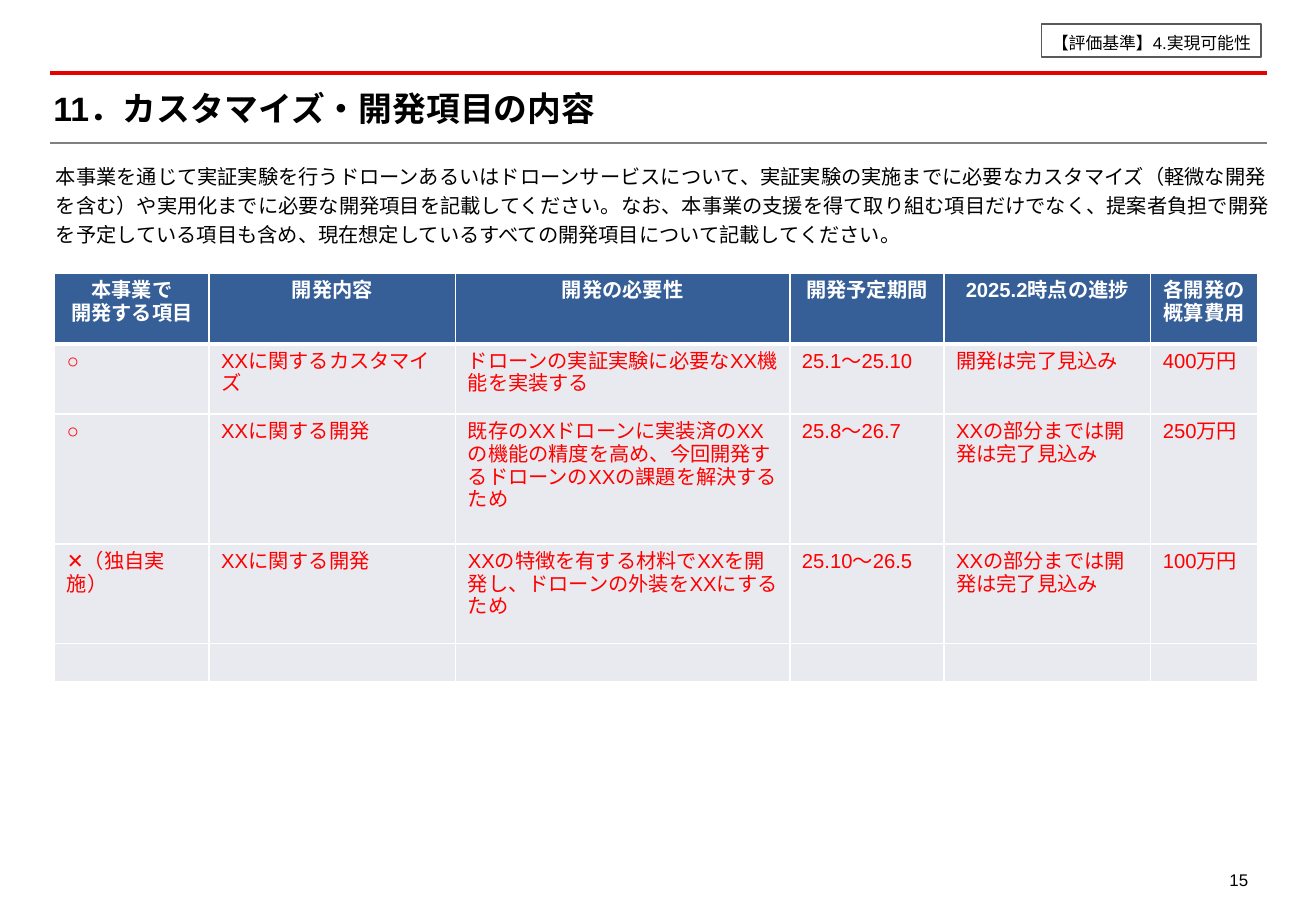
from dataclasses import dataclass

from lxml.etree import SubElement
from pptx import Presentation
from pptx.dml.color import RGBColor as RGB
from pptx.enum.shapes import MSO_CONNECTOR as Connector, MSO_SHAPE as Shape
from pptx.enum.text import MSO_ANCHOR as Anchor, MSO_AUTO_SIZE as AutoSize, PP_ALIGN as Align
from pptx.oxml import parse_xml
from pptx.oxml.ns import nsdecls, qn
from pptx.util import Inches, Pt


@dataclass(frozen=True)
class Theme:
    """Holds the colours, font and type sizes of the slide."""
    font: str = "Arial"
    ink: RGB = RGB(0, 0, 0)
    white: RGB = RGB(255, 255, 255)
    example: RGB = RGB(255, 0, 0)
    red_rule: RGB = RGB(0xE6, 0, 0)
    grey_rule: RGB = RGB(0x80, 0x80, 0x80)
    tag_line: RGB = RGB(0x59, 0x59, 0x59)
    header: RGB = RGB(0x36, 0x5F, 0x97)
    row: RGB = RGB(0xE8, 0xEA, 0xEF)
    title_size: int = 20
    body_size: int = 12
    small_size: int = 10


THEME = Theme()
TITLE = "11．カスタマイズ・開発項目の内容"
CRITERION = "【評価基準】4.実現可能性"
GUIDANCE = (
    "本事業を通じて実証実験を行うドローンあるいはドローンサービスについて、"
    "実証実験の実施までに必要なカスタマイズ（軽微な開発を含む）や"
    "実用化までに必要な開発項目を記載してください。"
    "なお、本事業の支援を得て取り組む項目だけでなく、"
    "提案者負担で開発を予定している項目も含め、"
    "現在想定しているすべての開発項目について記載してください。"
)
COLUMNS = [1.27, 2.03, 2.75, 1.27, 1.7, 0.88]
ROWS = [0.58, 0.58, 1.07, 0.82, 0.31]
ITEMS = [
    ["本事業で\n開発する項目", "開発内容", "開発の必要性", "開発予定期間",
     "2025.2時点の進捗", "各開発の概算費用"],
    ["○", "XXに関するカスタマイズ", "ドローンの実証実験に必要なXX機能を実装する",
     "25.1～25.10", "開発は完了見込み", "400万円"],
    ["○", "XXに関する開発",
     "既存のXXドローンに実装済のXXの機能の精度を高め、今回開発するドローンのXXの課題を解決するため",
     "25.8～26.7", "XXの部分までは開発は完了見込み", "250万円"],
    ["✕（独自実施）", "XXに関する開発",
     "XXの特徴を有する材料でXXを開発し、ドローンの外装をXXにするため",
     "25.10～26.5", "XXの部分までは開発は完了見込み", "100万円"],
    [""] * len(COLUMNS),
]


def write(frame, text, size, color=THEME.ink, bold=False, align=Align.LEFT, spacing=1.0):
    """Fills a text frame with evenly formatted paragraphs."""
    frame.text = text
    for paragraph in frame.paragraphs:
        paragraph.alignment = align
        paragraph.line_spacing = spacing
        paragraph.space_before = Pt(0)
        font = paragraph.font
        font.name, font.size, font.bold = THEME.font, Pt(size), bold
        font.color.rgb = color
        east_asian = SubElement(paragraph._p.pPr.find(qn("a:defRPr")), qn("a:ea"))
        east_asian.set("typeface", THEME.font)


def set_margins(frame, margin):
    """Gives a text frame the same margin on all sides."""
    frame.margin_left = frame.margin_right = Inches(margin)
    frame.margin_top = frame.margin_bottom = Inches(margin)


def add_rule(slide, left, top, width, color, weight):
    """Draws a horizontal rule."""
    rule = slide.shapes.add_connector(
        Connector.STRAIGHT, Inches(left), Inches(top), Inches(left + width), Inches(top))
    rule.line.color.rgb = color
    rule.line.width = Pt(weight)
    SubElement(rule._element.spPr, qn("a:effectLst"))


def add_heading(slide, left, top, width, height):
    """Places the title between its red and grey rules."""
    add_rule(slide, left, top, width, THEME.red_rule, 2)
    add_rule(slide, left, top + height, width, THEME.grey_rule, 1.25)
    title = slide.shapes.title
    title.left, title.top = Inches(left + 0.03), Inches(top + 0.12)
    title.width, title.height = Inches(width - 0.1), Inches(0.34)
    frame = title.text_frame
    set_margins(frame, 0)
    frame.vertical_anchor = Anchor.MIDDLE
    frame.auto_size = AutoSize.NONE
    write(frame, TITLE, THEME.title_size, bold=True)


def add_criterion(slide, left, top, width, height):
    """Adds the framed evaluation criterion."""
    criterion = slide.shapes.add_shape(
        Shape.RECTANGLE, Inches(left), Inches(top), Inches(width), Inches(height))
    criterion.shadow.inherit = False
    criterion.fill.background()
    criterion.line.color.rgb = THEME.tag_line
    criterion.line.width = Pt(1)
    frame = criterion.text_frame
    set_margins(frame, 0.02)
    frame.word_wrap = False
    frame.vertical_anchor = Anchor.MIDDLE
    write(frame, CRITERION, THEME.small_size, align=Align.CENTER, spacing=1.2)


def add_guidance(slide, left, top, width, height):
    """Adds the instructions above the table."""
    guidance = slide.shapes.add_textbox(
        Inches(left), Inches(top), Inches(width), Inches(height))
    frame = guidance.text_frame
    set_margins(frame, 0)
    frame.word_wrap = True
    write(frame, GUIDANCE, THEME.body_size, spacing=1.2)


def underline_cell(cell, color, weight):
    """Draws the bottom border of a cell."""
    cell._tc.get_or_add_tcPr().insert(0, parse_xml(
        f'<a:lnB {nsdecls("a")} w="{Pt(weight)}"><a:solidFill>'
        f'<a:srgbClr val="{color}"/></a:solidFill></a:lnB>'))


def add_items(slide, left, top):
    """Adds the table of development items."""
    items = slide.shapes.add_table(
        len(ROWS), len(COLUMNS), Inches(left), Inches(top),
        Inches(sum(COLUMNS)), Inches(sum(ROWS))).table
    items.horz_banding = False
    for column, width in zip(items.columns, COLUMNS):
        column.width = Inches(width)
    for number, (row, height, texts) in enumerate(zip(items.rows, ROWS, ITEMS)):
        row.height = Inches(height)
        is_header = number == 0
        for cell, text in zip(row.cells, texts):
            cell.fill.solid()
            cell.fill.fore_color.rgb = THEME.header if is_header else THEME.row
            write(cell.text_frame, text, THEME.body_size,
                  THEME.white if is_header else THEME.example, is_header,
                  Align.CENTER if is_header else Align.LEFT)
            if is_header:
                underline_cell(cell, THEME.white, 3)


def add_page_number(slide, left, top, width, height):
    """Adds the page number at the bottom right."""
    page = slide.shapes.add_textbox(
        Inches(left), Inches(top), Inches(width), Inches(height))
    page.text_frame.word_wrap = True
    write(page.text_frame, "15", THEME.small_size, align=Align.RIGHT, spacing=1.2)


def main():
    """Builds and saves the slide."""
    deck = Presentation()
    deck.slide_width, deck.slide_height = Inches(10.83), Inches(7.5)
    slide = deck.slides.add_slide(deck.slide_layouts[5])
    add_heading(slide, 0.41, 0.6, 10.02, 0.58)
    add_criterion(slide, 8.57, 0.2, 1.81, 0.27)
    add_guidance(slide, 0.46, 1.31, 10.05, 0.7)
    add_items(slide, 0.45, 2.25)
    add_page_number(slide, 9.93, 7.08, 0.44, 0.28)
    deck.save("out.pptx")


if __name__ == "__main__":
    main()
